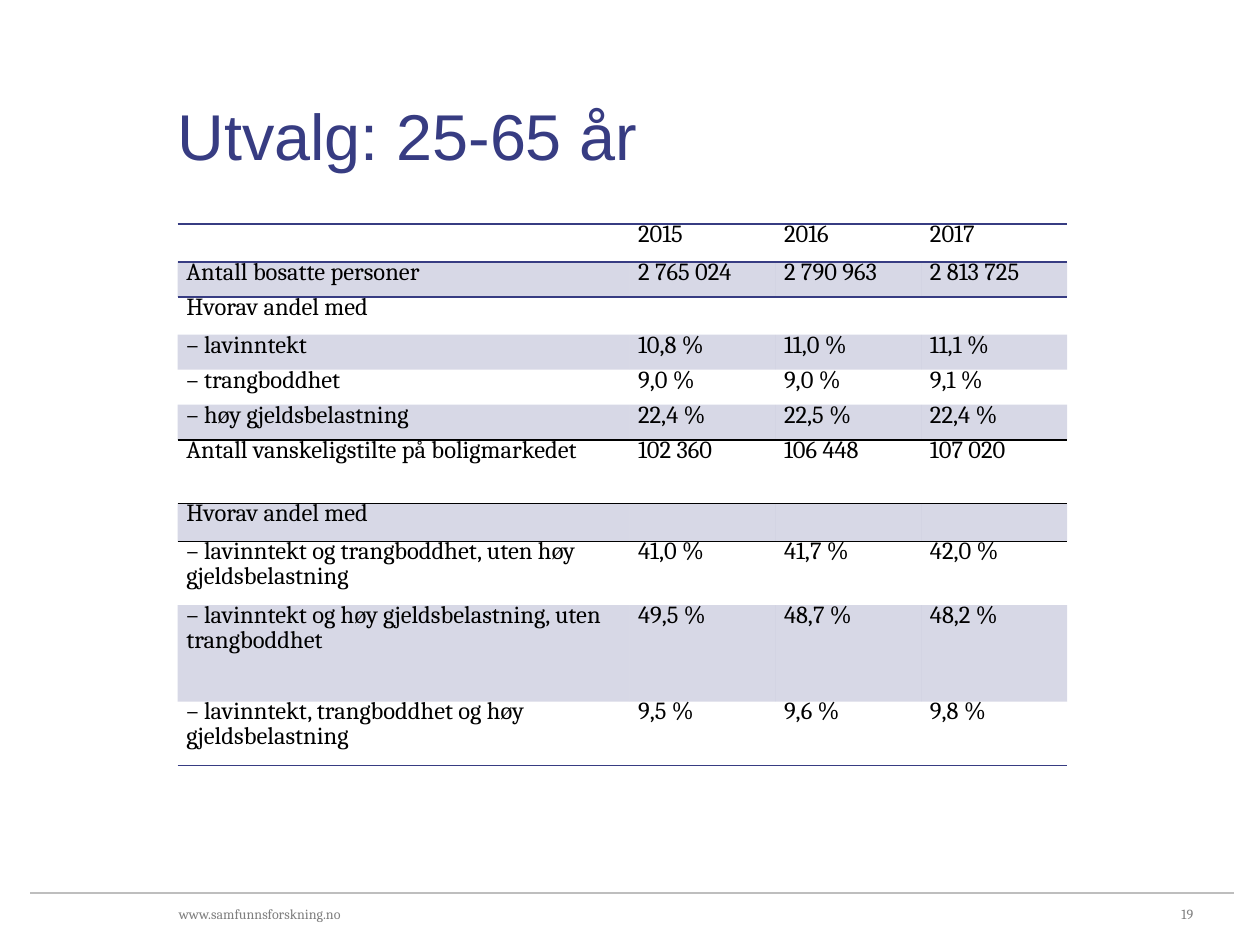
import lxml.etree
import pptx
import pptx.dml.color
import pptx.enum.shapes
import pptx.enum.text
import pptx.oxml
import pptx.oxml.ns
import pptx.util

WIDTH, HEIGHT = 10, 7.5
COLORS = {"navy": "373C82", "black": "000000", "gray": "7F7F7F", "rule": "BEBEBE"}
ALIGN = pptx.enum.text.PP_ALIGN
ANCHOR = pptx.enum.text.MSO_ANCHOR
NO_STYLE = "{2D5ABB26-0587-4C30-8999-92F81FD0307C}"

SHORT, TALL, TALLEST = 28, 51, 77
COLUMN_WEIGHTS = [3.59, 1.16, 1.16, 1.16]
ROWS = [
    (SHORT, ["", "2015", "2016", "2017"]),
    (SHORT, ["Antall bosatte personer", "2 765 024", "2 790 963", "2 813 725"]),
    (SHORT, ["Hvorav andel med", "", "", ""]),
    (SHORT, ["– lavinntekt", "10,8 %", "11,0 %", "11,1 %"]),
    (SHORT, ["– trangboddhet", "9,0 %", "9,0 %", "9,1 %"]),
    (SHORT, ["– høy gjeldsbelastning", "22,4 %", "22,5 %", "22,4 %"]),
    (TALL, ["Antall vanskeligstilte på boligmarkedet", "102 360", "106 448", "107 020"]),
    (SHORT, ["Hvorav andel med", "", "", ""]),
    (TALL, ["– lavinntekt og trangboddhet, uten høy gjeldsbelastning",
            "41,0 %", "41,7 %", "42,0 %"]),
    (TALLEST, ["– lavinntekt og høy gjeldsbelastning, uten trangboddhet",
               "49,5 %", "48,7 %", "48,2 %"]),
    (TALL, ["– lavinntekt, trangboddhet og høy gjeldsbelastning",
            "9,5 %", "9,6 %", "9,8 %"]),
]
RULES_ABOVE = {0: "navy", 1: "navy", 6: "black", 7: "black", len(ROWS): "navy"}


def share(left, top, width, height):
    inches = pptx.util.Inches
    return (inches(left * WIDTH), inches(top * HEIGHT),
            inches(width * WIDTH), inches(height * HEIGHT))


def rgb(name):
    return pptx.dml.color.RGBColor.from_string(COLORS[name])


def write(frame, text, size=14, font="Cambria", color="black", align=ALIGN.LEFT, spacing=None):
    para = frame.paragraphs[0]
    para.alignment = align
    if spacing:
        para.line_spacing = pptx.util.Pt(spacing)
    span = para.add_run()
    span.text = text
    span.font.size = pptx.util.Pt(size)
    span.font.name = font
    span.font.color.rgb = rgb(color)


def add_text(page, box, text, anchor=ANCHOR.MIDDLE, **style):
    frame = page.shapes.add_textbox(*box).text_frame
    frame.word_wrap = True
    frame.vertical_anchor = anchor
    frame.margin_left = frame.margin_right = frame.margin_top = frame.margin_bottom = 0
    write(frame, text, **style)


def add_rule(page, box):
    left, top, width, height = box
    line = page.shapes.add_connector(
        pptx.enum.shapes.MSO_CONNECTOR.STRAIGHT, left, top, left + width, top + height)
    line.line.color.rgb = rgb("rule")
    line.line.width = pptx.util.Pt(1)
    lxml.etree.SubElement(line._element.spPr, pptx.oxml.ns.qn("a:effectLst"))


def set_border(cell, side, color):
    cell._tc.get_or_add_tcPr().insert(0, pptx.oxml.parse_xml(
        f'<a:{side} {pptx.oxml.ns.nsdecls("a")} w="12700"><a:solidFill>'
        f'<a:srgbClr val="{COLORS[color]}"/></a:solidFill></a:{side}>'))


def fill_cell(cell, banded):
    if not banded:
        cell.fill.background()
        return
    cell.fill.solid()
    cell.fill.fore_color.rgb = rgb("navy")
    swatch = cell._tc.tcPr.find(".//" + pptx.oxml.ns.qn("a:srgbClr"))
    lxml.etree.SubElement(swatch, pptx.oxml.ns.qn("a:alpha"), val="20000")


def add_sample_table(page, box):
    left, top, width, height = box
    table = page.shapes.add_table(len(ROWS), len(COLUMN_WEIGHTS), *box).table
    table.first_row = table.horz_banding = False
    table._tbl.tblPr.find(pptx.oxml.ns.qn("a:tableStyleId")).text = NO_STYLE
    for column, weight in zip(table.columns, COLUMN_WEIGHTS):
        column.width = int(width * weight / sum(COLUMN_WEIGHTS))
    total = sum(weight for weight, values in ROWS)
    for row, (weight, values) in enumerate(ROWS):
        table.rows[row].height = int(height * weight / total)
        for column, text in enumerate(values):
            cell = table.cell(row, column)
            cell.margin_left = cell.margin_right = pptx.util.Inches(0.07)
            cell.margin_top = cell.margin_bottom = 0
            write(cell.text_frame, text, spacing=14,
                  align=ALIGN.JUSTIFY if column else ALIGN.LEFT)
            fill_cell(cell, row % 2 == 1)
            for side, edge in (("lnB", row + 1), ("lnT", row)):
                if edge in RULES_ABOVE:
                    set_border(cell, side, RULES_ABOVE[edge])


def add_footer(page, box):
    left, top, width, height = box
    add_rule(page, share(left, top, width, 0))
    text_top, text_height = top + height * 0.25, height * 0.32
    add_text(page, share(0.142, text_top, 0.236, text_height),
             "www.samfunnsforskning.no", size=8, color="gray")
    add_text(page, share(0.865, text_top, 0.082, text_height),
             "19", size=8, color="gray", align=ALIGN.RIGHT)


def main():
    deck = pptx.Presentation()
    deck.slide_width = pptx.util.Inches(WIDTH)
    deck.slide_height = pptx.util.Inches(HEIGHT)
    page = deck.slides.add_slide(deck.slide_layouts[6])
    add_footer(page, (0.024, 0.945, 0.955, 0.055))
    add_text(page, share(0.141, 0.1, 0.807, 0.084), "Utvalg: 25-65 år",
             anchor=ANCHOR.BOTTOM, size=37, font="Arial", color="navy")
    add_sample_table(page, share(0.141, 0.237, 0.706, 0.564))
    deck.save("out.pptx")


if __name__ == "__main__":
    main()
